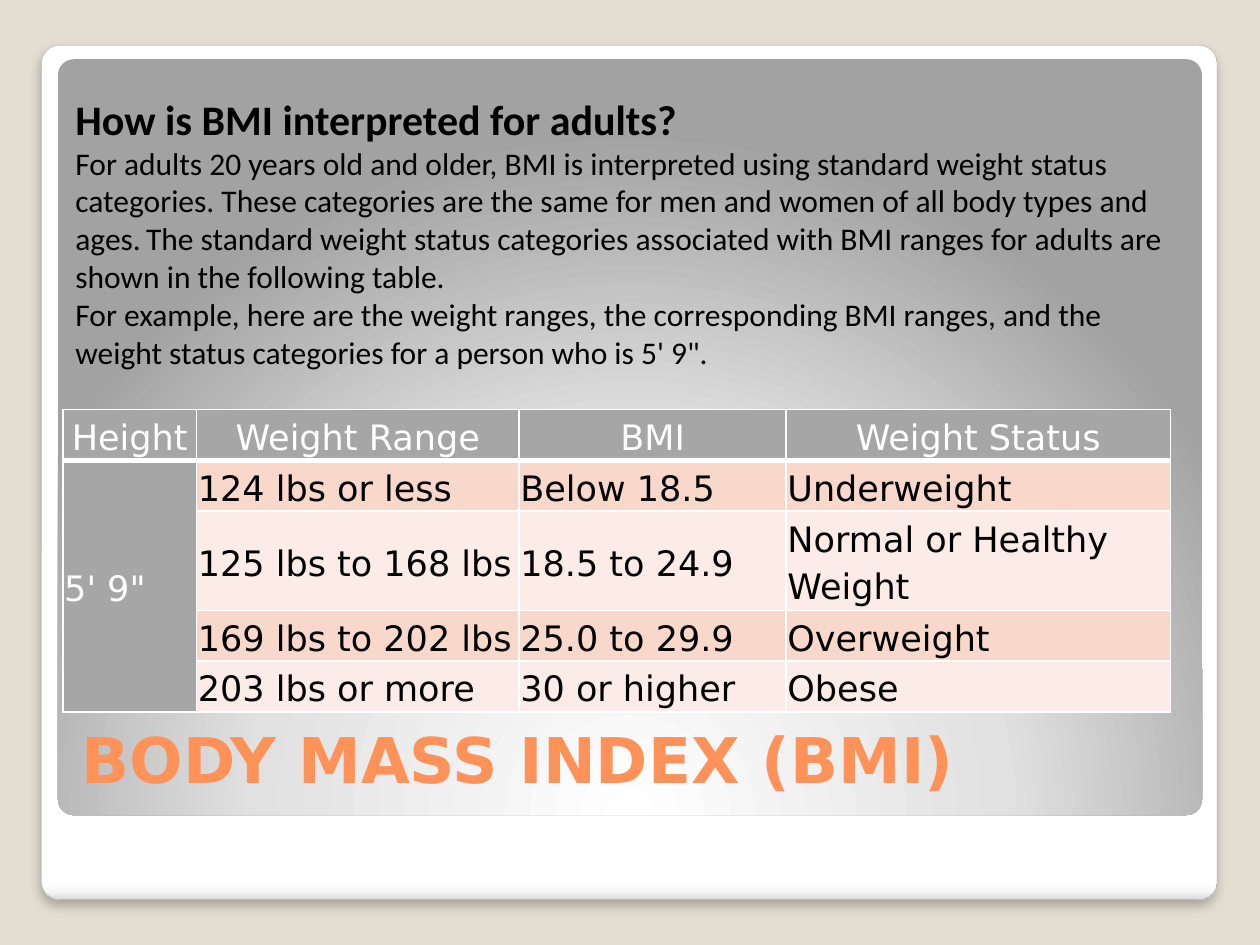
from lxml import etree
from pptx import Presentation
from pptx.dml.color import RGBColor
from pptx.enum.shapes import MSO_SHAPE as Preset
from pptx.enum.text import MSO_ANCHOR as Anchor, PP_ALIGN as Align
from pptx.oxml import parse_xml
from pptx.oxml.ns import nsdecls, qn
from pptx.util import Inches, Pt

BACKGROUND = RGBColor(0xE3, 0xDE, 0xD1)
WHITE = RGBColor(0xFF, 0xFF, 0xFF)
BLACK = RGBColor(0, 0, 0)
OUTLINE = RGBColor(0xA4, 0xA4, 0xA4)
ORANGE = RGBColor(0xFF, 0x92, 0x58)
HEADER = RGBColor(0xA6, 0xA6, 0xA6)
BANDS = (RGBColor(0xFC, 0xEC, 0xE7), RGBColor(0xF9, 0xD8, 0xCC))

FRAME_STOPS = [(0, "FFFFFF"), (98, "FFFFFF"), (99, "F7F7F7"), (100, "DADADA")]
PANEL_STOPS = [(0, "FFFFFF"), (55, "E1E1E1"), (100, "A2A2A2")]
LINEAR = '<a:lin ang="5400000" scaled="0"/>'
RADIAL = '<a:path path="circle"><a:fillToRect l="50000" t="175000" r="50000" b="-75000"/></a:path>'

HEADING = "How is BMI interpreted for adults?"
EXPLANATION = (
    "For adults 20 years old and older, BMI is interpreted using standard weight status "
    "categories. These categories are the same for men and women of all body types and ages.",
    " ",
    "The standard weight status categories associated with BMI ranges for adults are "
    "shown in the following table.",
)
EXAMPLE = (
    "For example, here are the weight ranges, the corresponding BMI ranges, and the "
    "weight status categories for a person who is 5' 9\"."
)
ROWS = [
    ("Height", "Weight Range", "BMI", "Weight Status"),
    ("5' 9\"", "124 lbs or less", "Below 18.5", "Underweight"),
    ("", "125 lbs to 168 lbs", "18.5 to 24.9", "Normal or Healthy Weight"),
    ("", "169 lbs to 202 lbs", "25.0 to 29.9", "Overweight"),
    ("", "203 lbs or more", "30 or higher", "Obese"),
]
COLUMN_WIDTHS = (1.06, 2.56, 2.12, 3.05)
ROW_HEIGHTS = (0.39, 0.39, 0.76, 0.39, 0.39)


def style_run(run, size, color, font, bold=False):
    run.font.size = Pt(size)
    run.font.color.rgb = color
    run.font.name = font
    run.font.bold = bold


def add_panel(slide, box, stops, direction):
    shape = slide.shapes.add_shape(Preset.ROUNDED_RECTANGLE, *map(Inches, box))
    shape.adjustments[0] = 0.021
    shape.shadow.inherit = False
    shape.line.fill.background()
    shape.fill.background()
    stop_xml = "".join(
        f'<a:gs pos="{position * 1000}"><a:srgbClr val="{color}"/></a:gs>'
        for position, color in stops
    )
    gradient = parse_xml(
        f'<a:gradFill {nsdecls("a")} rotWithShape="1">'
        f"<a:gsLst>{stop_xml}</a:gsLst>{direction}</a:gradFill>"
    )
    properties = shape.element.spPr
    properties.replace(properties.find(qn("a:noFill")), gradient)
    return shape


def add_frame(slide, box):
    shape = add_panel(slide, box, FRAME_STOPS, LINEAR)
    shape.line.color.rgb = OUTLINE
    shape.line.width = Pt(0.16)
    effects = shape.element.spPr.find(qn("a:effectLst"))
    shadow = etree.SubElement(
        effects, qn("a:outerShdw"),
        blurRad=str(Pt(6)), dist=str(Pt(4)), dir="5400000", rotWithShape="0",
    )
    color = etree.SubElement(shadow, qn("a:srgbClr"), val="000000")
    etree.SubElement(color, qn("a:alpha"), val="25000")


def add_text_frame(slide, box, anchor):
    text_frame = slide.shapes.add_textbox(*map(Inches, box)).text_frame
    text_frame.word_wrap = True
    text_frame.vertical_anchor = anchor
    return text_frame


def add_title(slide, box):
    text_frame = add_text_frame(slide, box, Anchor.BOTTOM)
    text_frame.text = "BODY MASS INDEX (BMI)"
    style_run(text_frame.paragraphs[0].runs[0], 36, ORANGE, "DejaVu Sans", True)


def add_explanation(slide, box):
    text_frame = add_text_frame(slide, box, Anchor.MIDDLE)
    text_frame.text = HEADING
    style_run(text_frame.paragraphs[0].runs[0], 24, BLACK, "Calibri", True)
    for parts in (EXPLANATION, (EXAMPLE,)):
        paragraph = text_frame.add_paragraph()
        for part in parts:
            run = paragraph.add_run()
            run.text = part
            size, font = (10.5, "Arial") if part == " " else (18, "Calibri")
            style_run(run, size, BLACK, font)


def add_borders(cell, bottom_width):
    properties = cell._tc.get_or_add_tcPr()
    widths = {"lnL": 1, "lnR": 1, "lnT": 1, "lnB": bottom_width}
    for index, (side, width) in enumerate(widths.items()):
        border = parse_xml(
            f'<a:{side} {nsdecls("a")} w="{Pt(width)}"><a:solidFill>'
            f'<a:srgbClr val="{WHITE}"/></a:solidFill></a:{side}>'
        )
        properties.insert(index, border)


def style_cell(cell, text, row, column):
    is_header = row == 0 or column == 0
    cell.margin_left = cell.margin_right = Inches(0.01)
    cell.margin_top = cell.margin_bottom = Inches(0.01)
    cell.vertical_anchor = Anchor.MIDDLE
    cell.fill.solid()
    cell.fill.fore_color.rgb = HEADER if is_header else BANDS[row % 2]
    add_borders(cell, 3 if row == 0 else 1)
    cell.text_frame.text = text
    paragraph = cell.text_frame.paragraphs[0]
    paragraph.line_spacing = 1.15
    paragraph.alignment = Align.CENTER if row == 0 else Align.LEFT
    for run in paragraph.runs:
        style_run(run, 20, WHITE if is_header else BLACK, "DejaVu Sans")


def add_bmi_table(slide, left, top):
    box = (left, top, sum(COLUMN_WIDTHS), sum(ROW_HEIGHTS))
    table = slide.shapes.add_table(
        len(ROWS), len(COLUMN_WIDTHS), *map(Inches, box)
    ).table
    for column, width in zip(table.columns, COLUMN_WIDTHS):
        column.width = Inches(width)
    for row, height in zip(table.rows, ROW_HEIGHTS):
        row.height = Inches(height)
    for row, texts in enumerate(ROWS):
        for column, text in enumerate(texts):
            style_cell(table.cell(row, column), text, row, column)
    table.cell(1, 0).merge(table.cell(len(ROWS) - 1, 0))


def main():
    presentation = Presentation()
    presentation.slide_width = Inches(10)
    presentation.slide_height = Inches(7.5)
    slide = presentation.slides.add_slide(presentation.slide_layouts[6])
    slide.background.fill.solid()
    slide.background.fill.fore_color.rgb = BACKGROUND
    add_frame(slide, (0.33, 0.36, 9.33, 6.78))
    add_panel(slide, (0.46, 0.47, 9.08, 6), PANEL_STOPS, RADIAL)
    add_title(slide, (0.55, 5.67, 8.95, 0.7))
    add_bmi_table(slide, 0.5, 3.25)
    add_explanation(slide, (0.5, 0.68, 8.92, 2.32))
    presentation.save("out.pptx")


if __name__ == "__main__":
    main()
